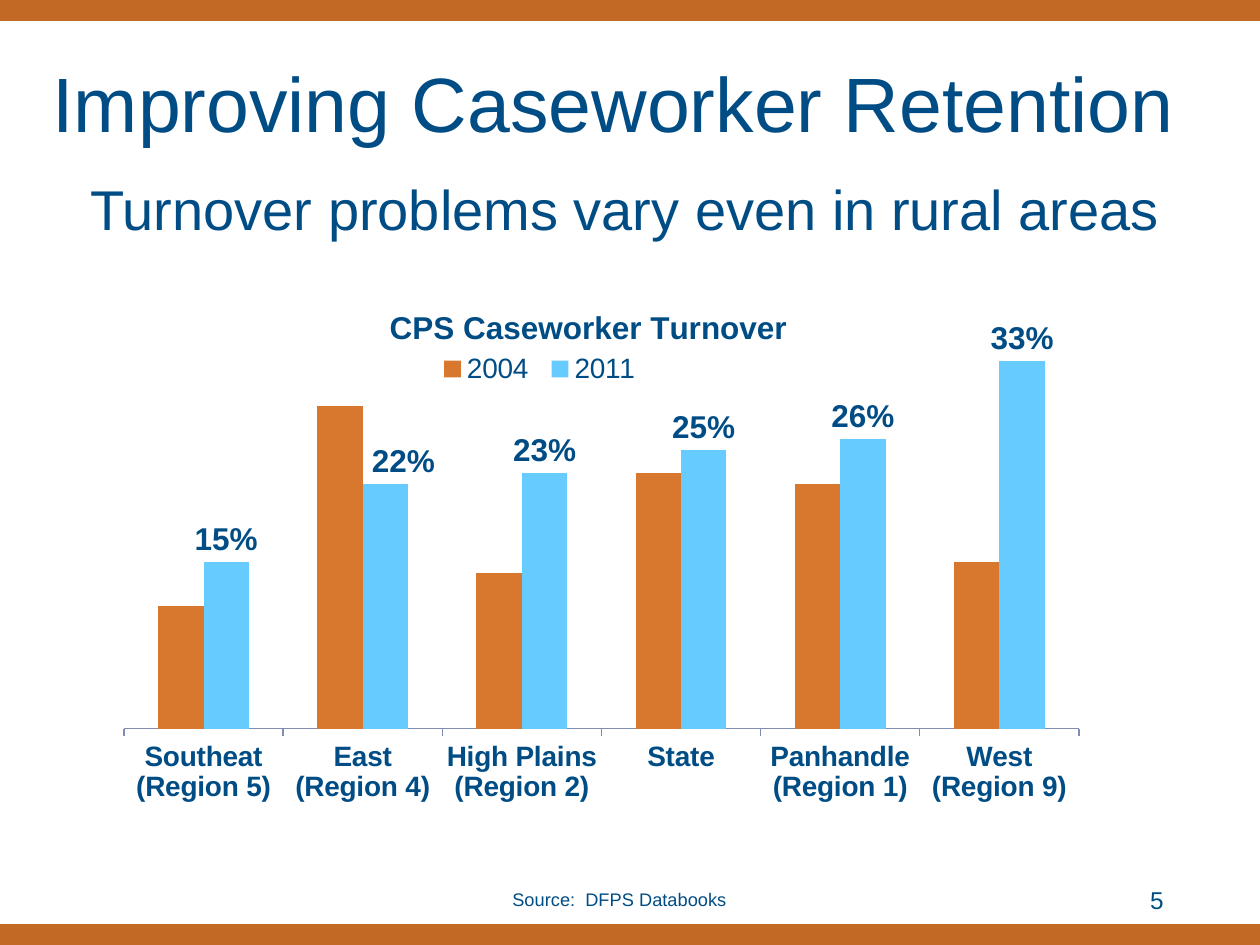
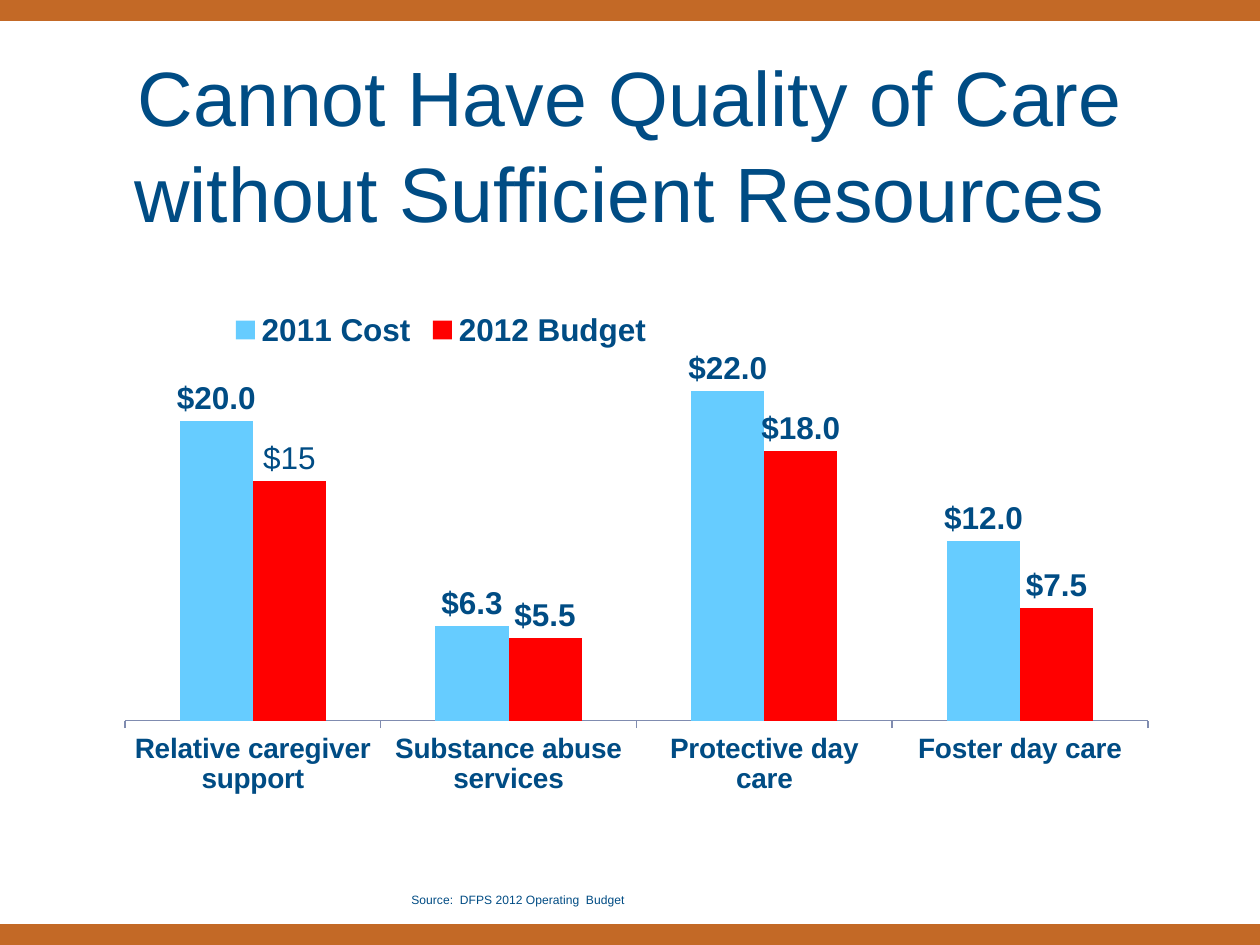
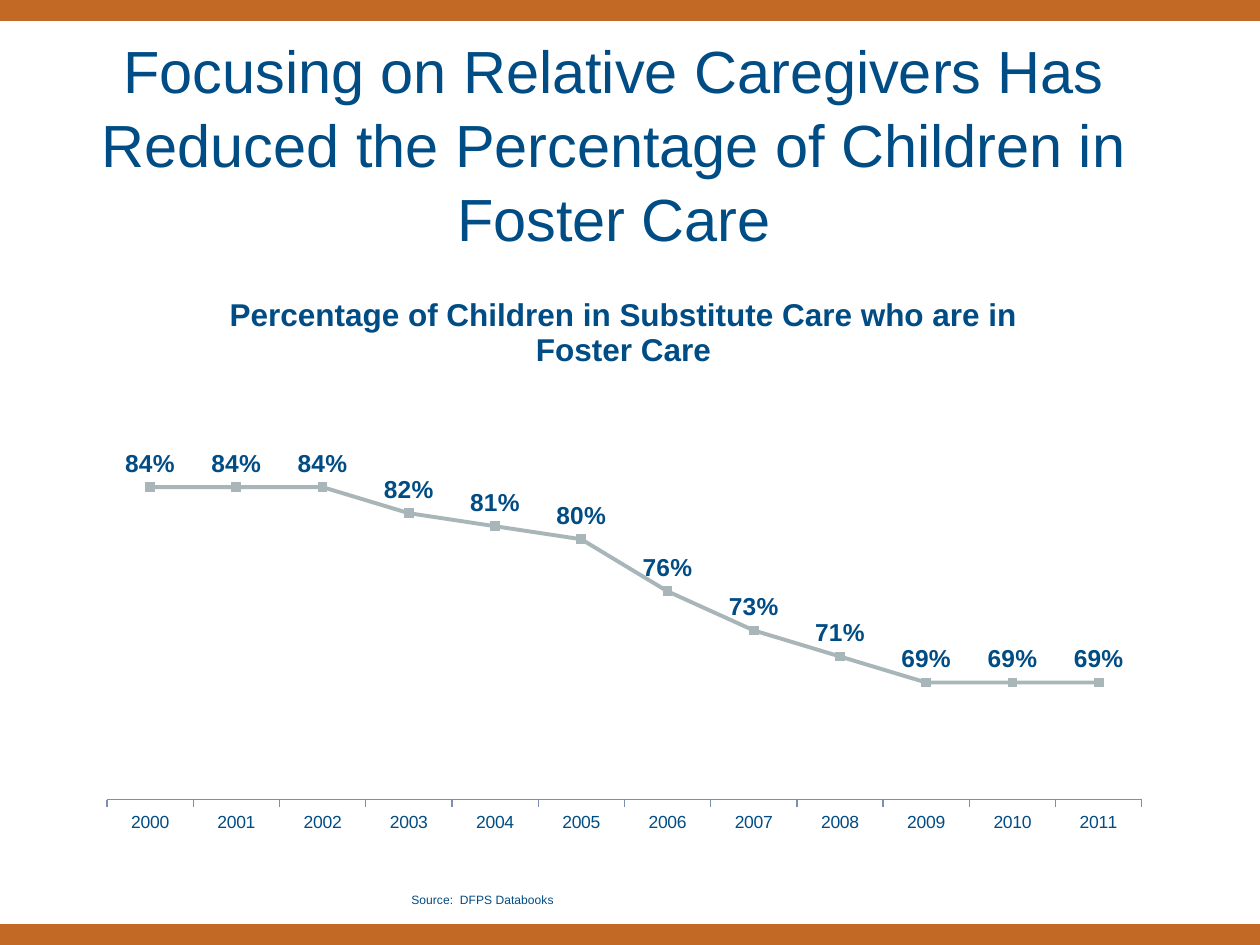
"""Build three child-welfare slides: caseworker turnover, budgets and foster care share."""
from pptx import Presentation, util as u
from pptx.chart.data import CategoryChartData
from pptx.dml.color import RGBColor
from pptx.enum import chart as ch, shapes, text
from pptx.oxml import parse_xml
from pptx.oxml.ns import nsdecls, qn

PX = 914400 / 126
WIDTH, HEIGHT, BAND = 1260, 945, 21
FONT = "Arial"
NAVY = RGBColor(0x00, 0x4C, 0x84)
RUST = RGBColor(0xC3, 0x69, 0x26)
ORANGE = RGBColor(0xD8, 0x78, 0x2E)
SKY = RGBColor(0x66, 0xCC, 0xFF)
RED = RGBColor(0xFF, 0x00, 0x00)
GRAY = RGBColor(0xA9, 0xB6, 0xB9)
AXIS = RGBColor(0x80, 0x8C, 0xB0)

CENTER, LEFT, RIGHT = text.PP_ALIGN.CENTER, text.PP_ALIGN.LEFT, text.PP_ALIGN.RIGHT
COLUMNS = ch.XL_CHART_TYPE.COLUMN_CLUSTERED
LINE = ch.XL_CHART_TYPE.LINE_MARKERS
SMALL_SOURCE = (399, 872, 809, 38)
FOSTER_SHARE = "Percentage of Children in Substitute Care who are in Foster Care"

SLIDES = [
    dict(
        title=("Improving Caseworker Retention ", 44, (21, 21, 1207, 158)),
        subtitle=("Turnover problems vary even in rural areas", 32, (32, 168, 1187, 567)),
        notes=[("Source:  DFPS Databooks", 18, CENTER, (84, 861, 1071, 38)),
               ("5", 24, RIGHT, (1029, 851, 147, 47))],
        chart=dict(
            kind=COLUMNS, frame=(105, 284, 1071, 538), plot=(124, 339, 955, 390),
            heading=("CPS Caseworker Turnover", (384, 301)),
            legend=((430, 350, 220, 38), 16, False),
            scale=(0, 0.35), format="0%", category_font=(16, True), label_size=18,
            categories=["Southeat (Region 5)", "East (Region 4)", "High Plains (Region 2)",
                        "State", "Panhandle (Region 1)", "West (Region 9)"],
            series=[("2004", [0.11, 0.29, 0.14, 0.23, 0.22, 0.15], ORANGE, False),
                    ("2011", [0.15, 0.22, 0.23, 0.25, 0.26, 0.33], SKY, True)],
            shifted_label=(1, 1, 18)),
    ),
    dict(
        title=("Cannot Have Quality of Care without Sufficient Resources ", 44,
               (95, 63, 1071, 158)),
        notes=[("Source:  DFPS 2012 Operating  Budget", 12, LEFT, SMALL_SOURCE)],
        chart=dict(
            kind=COLUMNS, frame=(73, 273, 1081, 567), plot=(125, 346, 1023, 375),
            legend=((224, 309, 434, 42), 18, True),
            scale=(0, 25), format='"$"#,##0.0', category_font=(16, True), label_size=18,
            categories=["Relative caregiver support", "Substance abuse services",
                        "Protective day care", "Foster day care"],
            series=[("2011 Cost", [20, 6.3, 22, 12], SKY, True),
                    ("2012 Budget", [16, 5.5, 18, 7.5], RED, True)],
            worded_label=(1, 0, " $15 ")),
    ),
    dict(
        title=("Focusing on Relative Caregivers Has Reduced the Percentage of Children in "
               "Foster Care", 34, (42, 63, 1144, 158)),
        notes=[("Source:  DFPS Databooks", 12, LEFT, SMALL_SOURCE)],
        chart=dict(
            kind=LINE, frame=(73, 262, 1103, 609), plot=(107, 409, 1035, 391),
            heading=(FOSTER_SHARE, (224, 288)),
            scale=(0.6, 0.9), format="0%", category_font=(10, False), label_size=14,
            categories=[str(year) for year in range(2000, 2012)],
            series=[(FOSTER_SHARE, [0.84, 0.84, 0.84, 0.82, 0.81, 0.80,
                                    0.76, 0.73, 0.71, 0.69, 0.69, 0.69], GRAY, True)]),
    ),
]


def emu(lengths):
    return [u.Emu(round(length * PX)) for length in lengths]


def style(font, size, bold=False):
    font.name, font.size, font.bold = FONT, u.Pt(size), bold
    font.color.rgb = NAVY


def add_text(slide, words, size, align, box, anchor=text.MSO_ANCHOR.TOP):
    frame = slide.shapes.add_textbox(*emu(box)).text_frame
    frame.word_wrap = True
    frame.vertical_anchor = anchor
    paragraph = frame.paragraphs[0]
    paragraph.alignment = align
    run = paragraph.add_run()
    run.text = words
    style(run.font, size)
    return paragraph, run


def add_bands(slide):
    for top in (0, HEIGHT - BAND):
        band = slide.shapes.add_shape(shapes.MSO_SHAPE.RECTANGLE, *emu((0, top, WIDTH, BAND)))
        band.shadow.inherit = False
        band.fill.solid()
        band.fill.fore_color.rgb = RUST
        band.line.fill.background()


def set_layout(owner, index, values, modes=""):
    for old in owner.findall(qn("c:layout")):
        owner.remove(old)
    parts = "".join(f'<c:{key} val="{value:.4f}"/>' for key, value in zip("xywh", values))
    owner.insert(index, parse_xml(
        f'<c:layout {nsdecls("c")}><c:manualLayout>{modes}{parts}</c:manualLayout></c:layout>'))


def place(owner, index, box, frame, inner=False):
    left, top, width, height = frame
    shares = [(box[0] - left) / width, (box[1] - top) / height]
    shares += [length / whole for length, whole in zip(box[2:], (width, height))]
    modes = '<c:layoutTarget val="inner"/>' if inner else ""
    set_layout(owner, index, shares, modes + '<c:xMode val="edge"/><c:yMode val="edge"/>')


def style_axes(chart, spec):
    values, categories = chart.value_axis, chart.category_axis
    values.minimum_scale, values.maximum_scale = spec["scale"]
    values.has_major_gridlines = False
    values.visible = False
    categories.major_tick_mark = ch.XL_TICK_MARK.OUTSIDE
    categories.format.line.color.rgb = AXIS
    categories.format.line.width = u.Pt(0.75)
    style(categories.tick_labels.font, *spec["category_font"])


def style_series(series, color, labelled, spec):
    if spec["kind"] == LINE:
        series.smooth = False
        series.format.line.color.rgb = color
        series.format.line.width = u.Pt(2.25)
        series.marker.style = ch.XL_MARKER_STYLE.SQUARE
        series.marker.size = 5
        fill = series.marker.format.fill
        series.marker.format.line.color.rgb = color
        position = ch.XL_LABEL_POSITION.ABOVE
    else:
        series.invert_if_negative = False
        fill = series.format.fill
        position = ch.XL_LABEL_POSITION.OUTSIDE_END
    fill.solid()
    fill.fore_color.rgb = color
    if labelled:
        labels = series.data_labels
        labels.show_value = True
        labels.number_format = spec["format"]
        labels.number_format_is_linked = False
        labels.position = position
        style(labels.font, spec["label_size"], True)


def adjust_labels(plot, spec):
    if "shifted_label" in spec:
        row, point, shift = spec["shifted_label"]
        series = plot.series[row]
        label = series.points[point].data_label
        style(label.font, spec["label_size"], True)
        label.position = ch.XL_LABEL_POSITION.OUTSIDE_END
        owner = series.data_labels._element.find(qn("c:dLbl"))
        set_layout(owner, 1, (shift / spec["frame"][2], 0))
    if "worded_label" in spec:
        row, point, words = spec["worded_label"]
        label = plot.series[row].points[point].data_label
        run = label.text_frame.paragraphs[0].add_run()
        run.text = words
        style(run.font, spec["label_size"])
        label.position = ch.XL_LABEL_POSITION.OUTSIDE_END


def add_chart(slide, spec):
    data = CategoryChartData(number_format=spec["format"])
    data.categories = spec["categories"]
    for name, values, *_ in spec["series"]:
        data.add_series(name, values)
    frame = spec["frame"]
    chart = slide.shapes.add_chart(spec["kind"], *emu(frame), data).chart
    style(chart.font, 10)
    plot = chart.plots[0]
    plot.vary_by_categories = False
    if spec["kind"] == COLUMNS:
        plot.gap_width, plot.overlap = 150, 0
    style_axes(chart, spec)
    for series, (_, _, color, labelled) in zip(plot.series, spec["series"]):
        style_series(series, color, labelled, spec)
    adjust_labels(plot, spec)

    chart.has_title = "heading" in spec
    if chart.has_title:
        words, corner = spec["heading"]
        run = chart.chart_title.text_frame.paragraphs[0].add_run()
        run.text = words
        style(run.font, 18, True)
        place(chart.chart_title._element, 1, corner, frame)
    chart.has_legend = "legend" in spec
    if chart.has_legend:
        box, size, bold = spec["legend"]
        chart.legend.position = ch.XL_LEGEND_POSITION.TOP
        chart.legend.include_in_layout = False
        style(chart.legend.font, size, bold)
        place(chart.legend._element, 1, box, frame)
    place(chart._chartSpace.chart.plotArea, 0, spec["plot"], frame, inner=True)


def main():
    deck = Presentation()
    deck.slide_width, deck.slide_height = emu((WIDTH, HEIGHT))
    for content in SLIDES:
        slide = deck.slides.add_slide(deck.slide_layouts[6])
        add_bands(slide)
        words, size, box = content["title"]
        title, _ = add_text(slide, words, size, CENTER, box, text.MSO_ANCHOR.MIDDLE)
        title.line_spacing = 1.04
        if "subtitle" in content:
            words, size, box = content["subtitle"]
            subtitle, _ = add_text(slide, words, size, CENTER, box)
            subtitle.space_before = u.Pt(4)
        for note in content["notes"]:
            _, run = add_text(slide, *note)
            run.font._element.set("baseline", "-25000")
        add_chart(slide, content["chart"])
    deck.save("out.pptx")


if __name__ == "__main__":
    main()
